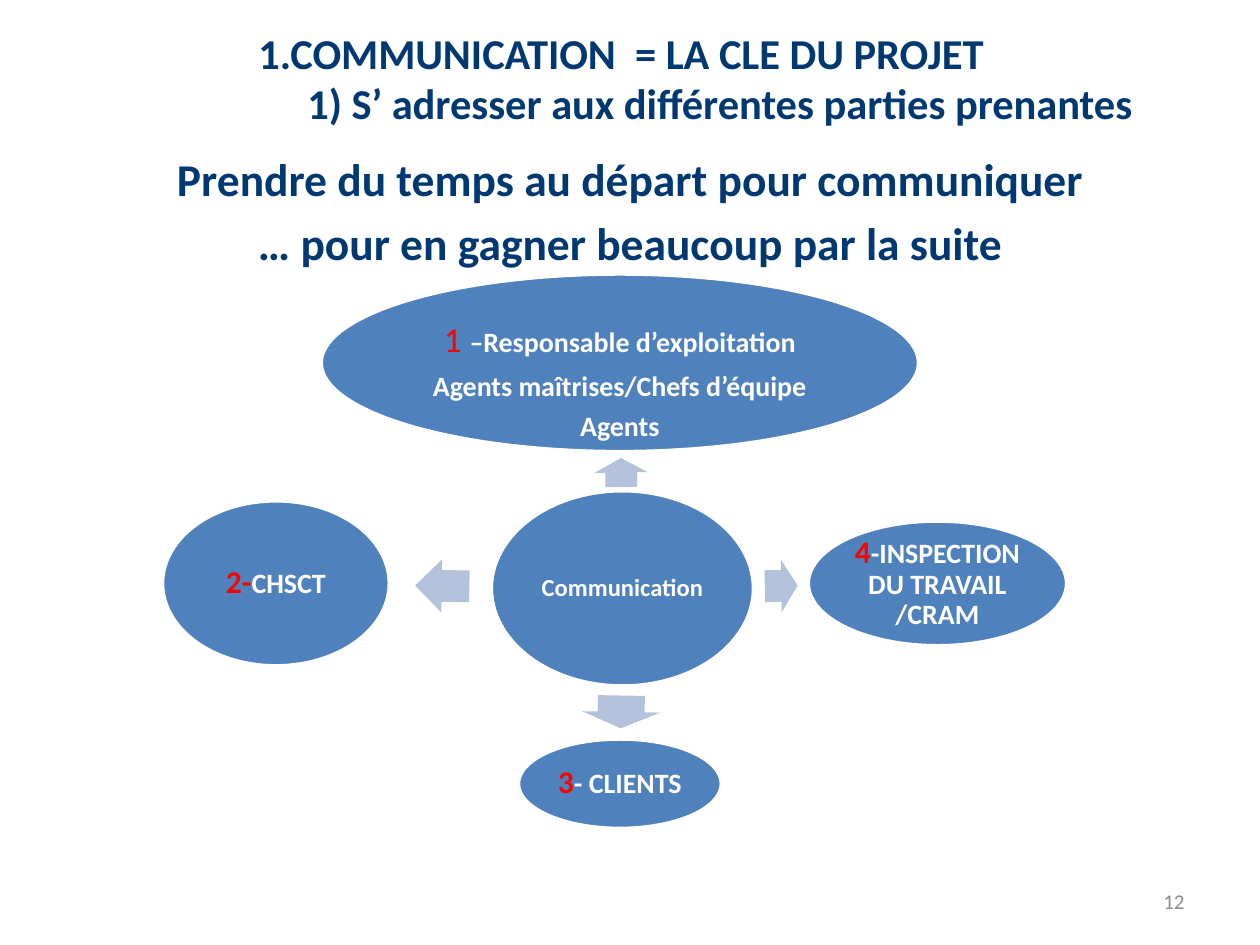
from pptx import Presentation, util as u
from pptx.dml.color import RGBColor
from pptx.enum import shapes, text

NAVY = RGBColor(0x00, 0x38, 0x71)
BLUE = RGBColor(0x4F, 0x81, 0xBD)
PALE = RGBColor(0xB3, 0xC1, 0xDB)
RED = RGBColor(0xFF, 0x00, 0x00)
WHITE = RGBColor(0xFF, 0xFF, 0xFF)
GREY = RGBColor(0x8C, 0x8C, 0x8C)
FONT = "Calibri"
ALIGN = text.PP_ALIGN

# Content: heading lines with their left indent in inches
HEADING = [("1.COMMUNICATION  = LA CLE DU PROJET", 0.62),
           ("1) S’ adresser aux différentes parties prenantes", 1.01)]
MESSAGE = ["Prendre du temps au départ pour communiquer",
           "… pour en gagner beaucoup par la suite"]
PAGE = "12"

# Ellipses: centre, size, then paragraphs of (words, points, colour, bold)
PARTIES = [
    ((4.94, 4.67), (2.08, 1.55), [[("Communication", 14, WHITE, True)]]),
    ((4.92, 2.88), (4.74, 1.41), [
        [("1 ", 20, RED, False), ("–Responsable d’exploitation", 16, WHITE, True)],
        [("Agents maîtrises/Chefs d’équipe", 16, WHITE, True)],
        [("Agents", 16, WHITE, True)]]),
    ((2.19, 4.63), (1.8, 1.31),
     [[("2-", 18, RED, True), ("CHSCT", 16, WHITE, True)]]),
    ((4.92, 6.22), (1.61, 0.71),
     [[("3", 18, RED, True), ("- CLIENTS", 16, WHITE, True)]]),
    ((7.44, 4.63), (2.05, 0.99),
     [[("4", 18, RED, True), ("-INSPECTION DU TRAVAIL /CRAM", 16, WHITE, True)]]),
]
# Arrows from the hub: centre, length and breadth, rotation
ARROWS = [((4.93, 3.75), (0.23, 0.42), 269.1),
          ((3.51, 4.65), (0.43, 0.42), 180.9),
          ((4.93, 5.65), (0.26, 0.62), 91),
          ((6.2, 4.65), (0.26, 0.42), 359)]


def style(run, size, color, bold):
    run.font.name, run.font.size = FONT, u.Pt(size)
    run.font.color.rgb, run.font.bold = color, bold


def place(box, left, top, width, height):
    box.left, box.top = u.Inches(left), u.Inches(top)
    box.width, box.height = u.Inches(width), u.Inches(height)


def fill_lines(frame, lines, size, align):
    frame.auto_size = text.MSO_AUTO_SIZE.NONE
    frame.text = "\n".join(lines)
    for paragraph in frame.paragraphs:
        paragraph.alignment = align
        style(paragraph.runs[0], size, NAVY, True)


def centred_shape(kind, centre, size, color):
    (x, y), (w, h) = centre, size
    shape = slide.shapes.add_shape(kind, u.Inches(x - w / 2), u.Inches(y - h / 2),
                                   u.Inches(w), u.Inches(h))
    shape.shadow.inherit = False
    shape.fill.solid()
    shape.fill.fore_color.rgb = color
    return shape


deck = Presentation()
deck.slide_width, deck.slide_height = u.Inches(10), u.Inches(7.5)
slide = deck.slides.add_slide(deck.slide_layouts[0])

# Heading
heading = slide.shapes.title
place(heading, 1.33, 0.08, 8.5, 1.07)
fill_lines(heading.text_frame, [line for line, _ in HEADING], 24.3, ALIGN.LEFT)
heading.text_frame.vertical_anchor = text.MSO_ANCHOR.MIDDLE
for paragraph, (_, indent) in zip(heading.text_frame.paragraphs, HEADING):
    paragraph._p.get_or_add_pPr().set("marL", str(u.Inches(indent)))
    paragraph.space_before = u.Pt(0)

# Message
message = slide.placeholders[1]
place(message, 0.17, 1.15, 9.67, 5.97)
fill_lines(message.text_frame, MESSAGE, 26, ALIGN.CENTER)
first, second = message.text_frame.paragraphs
first.space_before, second.space_before = u.Pt(0), u.Pt(5.2)

# Page number
page = slide.shapes.add_textbox(u.Inches(7.17), u.Inches(6.95),
                                u.Inches(2.33), u.Inches(0.4)).text_frame
page.word_wrap = True
page.vertical_anchor = text.MSO_ANCHOR.MIDDLE
page.text = PAGE
page.paragraphs[0].alignment = ALIGN.RIGHT
style(page.paragraphs[0].runs[0], 12, GREY, False)

# Arrows
for centre, size, rotation in ARROWS:
    arrow = centred_shape(shapes.MSO_SHAPE.RIGHT_ARROW, centre, size, PALE)
    arrow.line.fill.background()
    arrow.rotation = rotation
    arrow.adjustments[0], arrow.adjustments[1] = 0.6, 0.5

# Hub and the parties around it
for centre, size, paragraphs in PARTIES:
    party = centred_shape(shapes.MSO_SHAPE.OVAL, centre, size, BLUE)
    party.line.color.rgb, party.line.width = WHITE, u.Pt(2)
    frame = party.text_frame
    frame.word_wrap = True
    frame.margin_left = frame.margin_right = u.Inches(0.02)
    frame.margin_top = frame.margin_bottom = u.Inches(0.02)
    frame.vertical_anchor = text.MSO_ANCHOR.MIDDLE
    if len(paragraphs) > 1:  # the long list hangs low in its ellipse
        frame.vertical_anchor = text.MSO_ANCHOR.TOP
        frame.margin_top = u.Inches(0.18)
    for i, pieces in enumerate(paragraphs):
        paragraph = frame.add_paragraph() if i else frame.paragraphs[0]
        paragraph.alignment = ALIGN.CENTER
        paragraph.line_spacing = 0.9
        paragraph.space_after = u.Pt(0.35 * pieces[0][1])
        for words, *look in pieces:
            run = paragraph.add_run()
            run.text = words
            style(run, *look)

deck.save("out.pptx")
